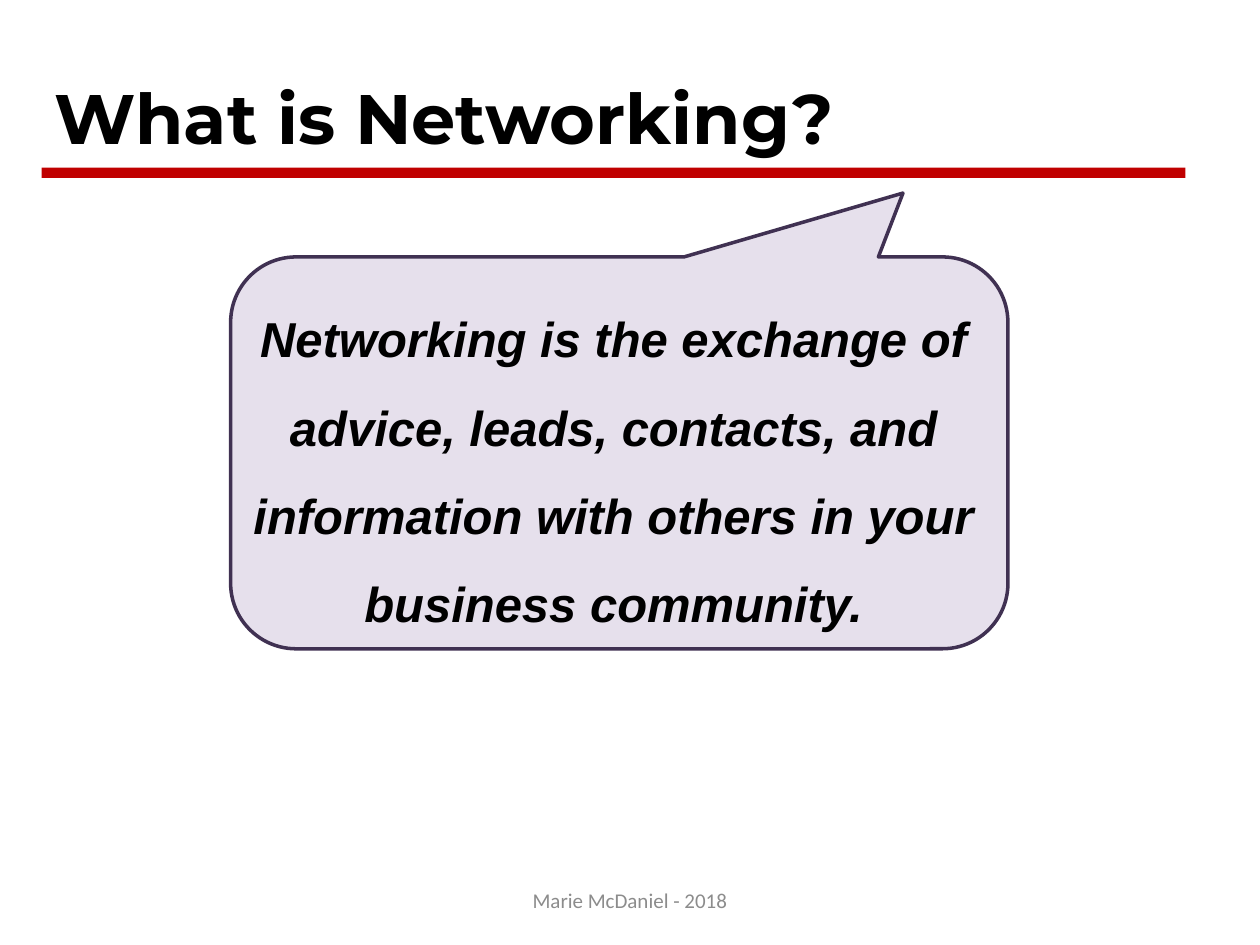
from dataclasses import dataclass

from pptx import Presentation
from pptx.dml.color import RGBColor
from pptx.enum.shapes import MSO_SHAPE
from pptx.enum.text import MSO_ANCHOR, PP_ALIGN
from pptx.util import Cm, Pt


@dataclass(frozen=True)
class Theme:
    """Colours and type sizes of the slide."""
    ink: str = "000000"
    footer: str = "8C8C8C"
    rule: str = "C00000"
    bubble: str = "E6E0EC"
    outline: str = "403152"
    title_size: int = 40
    quote_size: int = 28
    footer_size: int = 12
    outline_width: int = 2


@dataclass(frozen=True)
class Area:
    """A rectangle in centimetres."""
    left: float
    top: float
    width: float
    height: float

    def lengths(self) -> tuple:
        """Return the rectangle as lengths."""
        return Cm(self.left), Cm(self.top), Cm(self.width), Cm(self.height)


@dataclass(frozen=True)
class Style:
    """The look of one paragraph."""
    font: str
    size: int
    colour: str
    bold: bool = False
    italic: bool = False
    align: PP_ALIGN = PP_ALIGN.CENTER


THEME = Theme()
TITLE = Style("Montserrat", THEME.title_size, THEME.ink, bold=True, align=PP_ALIGN.LEFT)
QUOTE = Style("Arial", THEME.quote_size, THEME.ink, bold=True, italic=True)
FOOTER = Style("Calibri", THEME.footer_size, THEME.footer)


def write(box, text: str, style: Style, anchor: MSO_ANCHOR):
    """Fill a box with one styled paragraph and return it."""
    frame = box.text_frame
    frame.word_wrap = True
    frame.vertical_anchor = anchor
    frame.text = text
    para = frame.paragraphs[0]
    para.alignment = style.align
    font = para.font
    font.name, font.size = style.font, Pt(style.size)
    font.bold, font.italic = style.bold, style.italic
    font.color.rgb = RGBColor.from_string(style.colour)
    return para


def add_filled(page, kind: MSO_SHAPE, area: Area, colour: str):
    """Add a preset shape with a flat fill and no line."""
    shape = page.shapes.add_shape(kind, *area.lengths())
    shape.shadow.inherit = False
    shape.fill.solid()
    shape.fill.fore_color.rgb = RGBColor.from_string(colour)
    shape.line.fill.background()
    return shape


def add_title(page, text: str, area: Area) -> None:
    """Place and style the title placeholder."""
    title = page.shapes.title
    title.left, title.top, title.width, title.height = area.lengths()
    write(title, text, TITLE, MSO_ANCHOR.MIDDLE)


def add_bubble(page, area: Area) -> None:
    """Add the outlined speech bubble that points to the title."""
    bubble = add_filled(page, MSO_SHAPE.ROUNDED_RECTANGULAR_CALLOUT, area, THEME.bubble)
    bubble.line.color.rgb = RGBColor.from_string(THEME.outline)
    bubble.line.width = Pt(THEME.outline_width)
    for index, value in enumerate((0.365, -0.663, 0.167)):
        bubble.adjustments[index] = value


def add_quote(page, text: str, area: Area) -> None:
    """Add the definition, indented on both sides to sit in the bubble."""
    box = page.shapes.add_textbox(*area.lengths())
    para = write(box, text, QUOTE, MSO_ANCHOR.TOP)
    para.line_spacing = 1.5
    para.space_after = Pt(10)
    properties = para._p.get_or_add_pPr()
    properties.set("marL", str(Cm(2.39)))
    properties.set("marR", str(Cm(1.78)))


def main() -> None:
    """Build the slide and save it."""
    deck = Presentation()
    deck.slide_width, deck.slide_height = Cm(25.4), Cm(19.05)
    page = deck.slides.add_slide(deck.slide_layouts[5])
    add_title(page, "What is Networking?", Area(0.84, 0.76, 23.29, 3.18))
    add_bubble(page, Area(4.65, 5.18, 15.67, 7.9))
    add_quote(
        page,
        "Networking is the exchange of advice, leads, contacts, and "
        "information with others in your business community.",
        Area(2.11, 5.51, 19.91, 7.21),
    )
    add_filled(page, MSO_SHAPE.RECTANGLE, Area(0.84, 3.38, 23.06, 0.21), THEME.rule)
    footer = page.shapes.add_textbox(*Area(8.68, 17.65, 8.04, 1.01).lengths())
    write(footer, "Marie McDaniel - 2018", FOOTER, MSO_ANCHOR.MIDDLE)
    deck.save("out.pptx")


if __name__ == "__main__":
    main()
